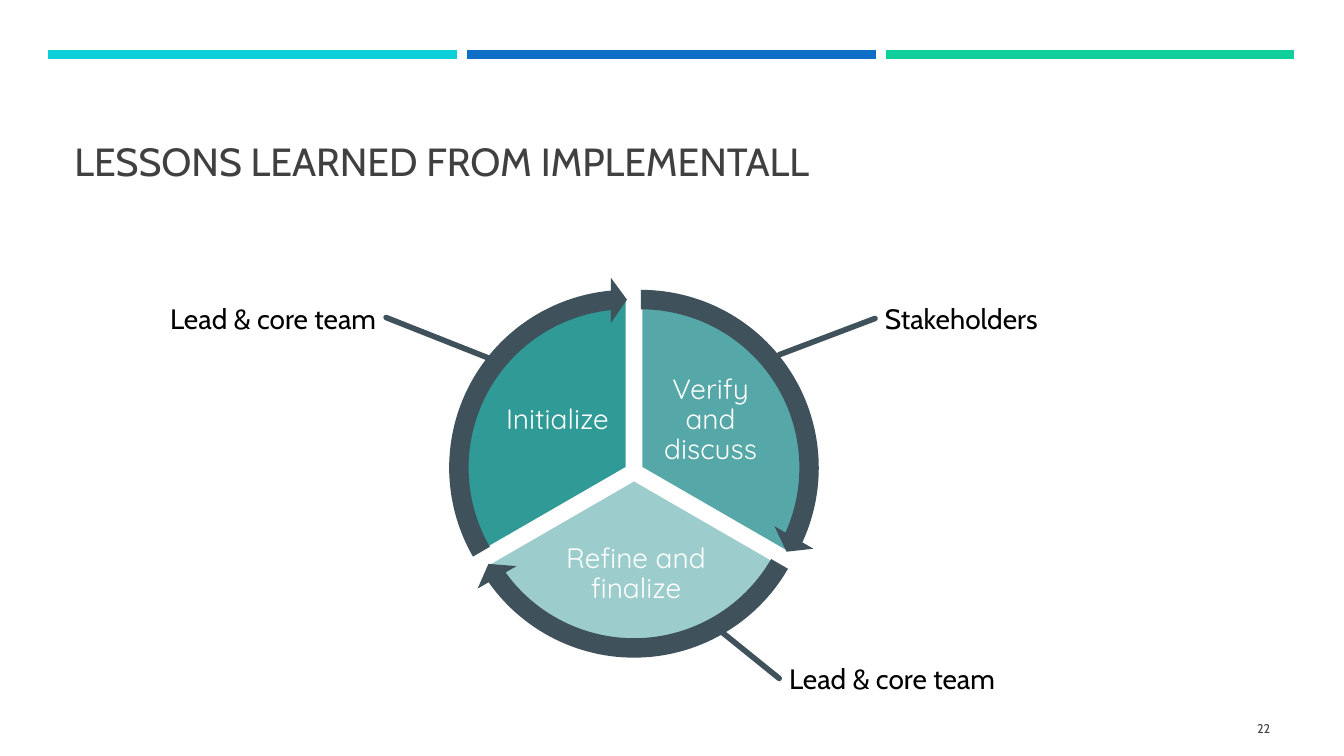
import math

import pptx
import pptx.dml.color
import pptx.enum.shapes
import pptx.enum.text
import pptx.oxml
import pptx.util
from pptx.oxml import ns

Pt = pptx.util.Pt
ALIGN = pptx.enum.text.PP_ALIGN
ANCHOR = pptx.enum.text.MSO_ANCHOR
SHAPE = pptx.enum.shapes.MSO_SHAPE

SLATE, GREY, WHITE = "3F525B", "404040", "FFFFFF"

# Start and end angle in degrees, fill, label, label centre (from the cycle centre), label size
STAGES = [
    (270, 30, "56A7A7", "Verify and discuss", (54.7, -36.7), (86.4, 72)),
    (30, 150, "9CCDCC", "Refine and finalize", (1.4, 73.4), (129.6, 63.4)),
    (150, 270, "309A96", "Initialize", (-54.7, -36.7), (86.4, 72)),
]

# Text, text box left, top and width, line start and end (all from the cycle centre)
CALLOUTS = [
    ("Stakeholders", (172.1, -125.3, 210), (172.1, -109.5), (103.7, -83.6)),
    ("Lead & core team", (103.7, 131.7, 210), (62.6, 114.4), (103.7, 147.6)),
    ("Lead & core team", (-338.4, -125.3, 203), (-100.8, -80), (-177.1, -110.2)),
]


def rgb(color):
    return pptx.dml.color.RGBColor.from_string(color)


def add_text(slide, box, text, size, color, font="Cabin", align=ALIGN.LEFT,
             anchor=ANCHOR.TOP, inset=None, spacing=None):
    textbox = slide.shapes.add_textbox(*map(Pt, box))
    frame = textbox.text_frame
    frame.text = text
    frame.word_wrap = True
    frame.vertical_anchor = anchor
    if inset is not None:
        frame.margin_left = frame.margin_right = Pt(inset)
        frame.margin_top = frame.margin_bottom = Pt(inset)
    paragraph = frame.paragraphs[0]
    paragraph.alignment = align
    if spacing:
        paragraph.line_spacing = spacing
    run_font = paragraph.runs[0].font
    run_font.name, run_font.size = font, Pt(size)
    run_font.color.rgb = rgb(color)


def add_line(slide, start, end, color, width, cap="flat"):
    line = slide.shapes.add_connector(
        pptx.enum.shapes.MSO_CONNECTOR.STRAIGHT, *map(Pt, (*start, *end)))
    line.line.color.rgb = rgb(color)
    line.line.width = Pt(width)
    properties = line._element.spPr
    properties.find(ns.qn("a:ln")).set("cap", cap)
    properties.append(pptx.oxml.parse_xml(f"<a:effectLst {ns.nsdecls('a')}/>"))


def add_round(slide, kind, centre, diameter, adjustments, fill, outline=None):
    x, y = centre
    part = slide.shapes.add_shape(
        kind, Pt(x - diameter / 2), Pt(y - diameter / 2), Pt(diameter), Pt(diameter))
    for index, value in enumerate(adjustments):
        part.adjustments[index] = value
    part.shadow.inherit = False
    part.fill.solid()
    part.fill.fore_color.rgb = rgb(fill)
    if outline:
        part.line.color.rgb = rgb(outline)
        part.line.width = Pt(1.75)
    else:
        part.line.fill.background()


def add_header_bars(slide, left, y, width):
    gap = 7.4
    bar = (width - 2 * gap) / 3
    for index, color in enumerate(("0BD0D9", "0F6FC6", "10CF9B")):
        start = left + index * (bar + gap)
        add_line(slide, (start, y), (start + bar, y), color, 6.5)


def add_cycle(slide, left, top, size):
    x, y = left + size / 2, top + size / 2
    offset = 5.8
    arrows = []
    # Sectors, each pushed outwards along its middle angle
    for start, end, fill, label, (dx, dy), (width, height) in STAGES:
        middle = math.radians(start + 60)
        centre = (x + offset * math.cos(middle), y + offset * math.sin(middle))
        # Angle adjustments count 0.6 per degree
        begin, stop = start * 0.6, end * 0.6
        add_round(slide, SHAPE.PIE, centre, size, (begin, stop), fill, WHITE)
        add_text(slide, (x + dx - width / 2, y + dy - height / 2, width, height),
                 label, 20, WHITE, "Quicksand", ALIGN.CENTER, ANCHOR.MIDDLE, 2, 0.9)
        arrows.append((centre, (0.051, 3.275, stop - 3.275, begin, 0.059)))
    # Arrows around the sectors
    for centre, adjustments in arrows:
        add_round(slide, SHAPE.CIRCULAR_ARROW, centre, size * 1.125, adjustments, SLATE)
    # Callouts
    for text, (dx, dy, width), start, end in CALLOUTS:
        add_text(slide, (x + dx, y + dy, width, 31.7), text, 20, "000000")
        add_line(slide, (x + start[0], y + start[1]), (x + end[0], y + end[1]),
                 SLATE, 4, "rnd")


def main():
    presentation = pptx.Presentation()
    presentation.slide_width, presentation.slide_height = Pt(960), Pt(540)
    slide = presentation.slides.add_slide(presentation.slide_layouts[6])

    add_header_bars(slide, 34.6, 38.9, 889.9)
    # Title and page number
    add_text(slide, (46.1, 57.6, 868.3, 77.8), "LESSONS LEARNED FROM IMPLEMENTALL",
             28, GREY, anchor=ANCHOR.BOTTOM)
    add_text(slide, (831.6, 506.2, 82.8, 28.8), "22", 9, GREY,
             align=ALIGN.RIGHT, anchor=ANCHOR.MIDDLE)
    add_cycle(slide, 331.9, 216, 242)

    presentation.save("out.pptx")


if __name__ == "__main__":
    main()
